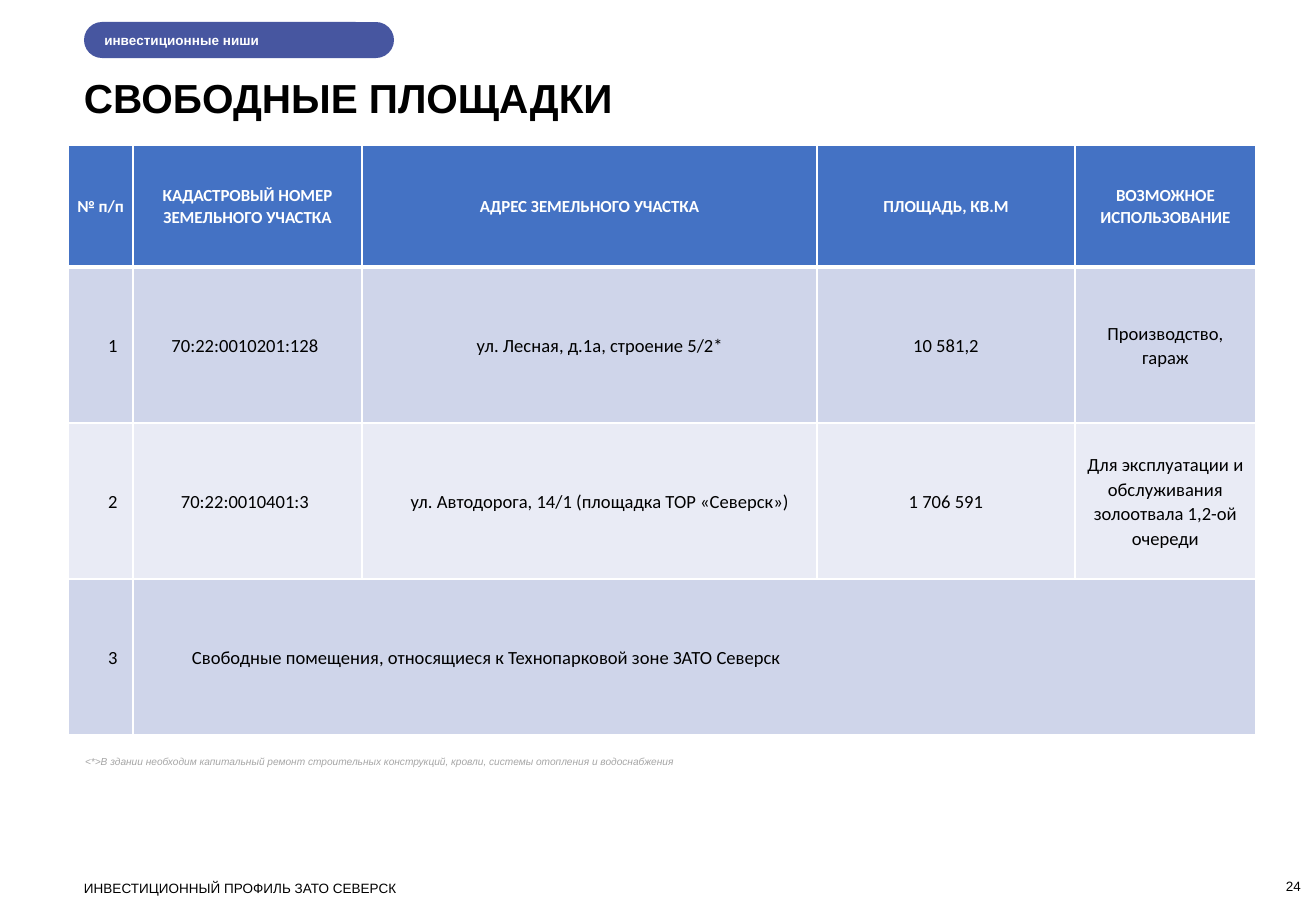
from copy import deepcopy
from dataclasses import dataclass

from lxml.etree import SubElement
from pptx import Presentation
from pptx.dml.color import RGBColor
from pptx.enum.shapes import MSO_SHAPE
from pptx.enum.text import MSO_ANCHOR, PP_ALIGN
from pptx.oxml.ns import qn
from pptx.util import Emu, Pt

EMU_PER_PX = 7526


@dataclass(frozen=True)
class Theme:
    heading_font: str = "Arial"
    table_font: str = "Calibri"
    black: str = "000000"
    white: str = "FFFFFF"
    note_gray: str = "A6A6A6"
    badge_blue: str = "4756A0"
    header_blue: str = "4472C4"
    bands: tuple = ("CFD5EA", "E9EBF5")
    title_size: int = 24
    header_size: int = 10
    body_size: int = 11
    small_size: int = 8
    note_size: int = 6


THEME = Theme()


def px(length):
    return Emu(length * EMU_PER_PX)


def write_text(frame, text, size=THEME.small_size, font=THEME.heading_font,
               color=THEME.black, bold=False, italic=False, align=PP_ALIGN.LEFT,
               line_spacing=None, space_after=None):
    """Fill the first paragraph; a vertical tab in the text is a line break."""
    paragraph = frame.paragraphs[0]
    paragraph.text = text
    paragraph.alignment = align
    paragraph.line_spacing = line_spacing
    paragraph.space_after = space_after
    for run in paragraph.runs:
        run.font.size = Pt(size)
        run.font.name = font
        run.font.bold = bold
        run.font.italic = italic
        run.font.color.rgb = RGBColor.from_string(color)
    for line_break in paragraph._p.findall(qn("a:br")):
        line_break.append(deepcopy(paragraph.runs[0]._r.rPr))


def set_margins(target, left=0, top=0, right=0, bottom=0):
    target.margin_left, target.margin_top = px(left), px(top)
    target.margin_right, target.margin_bottom = px(right), px(bottom)


class SlideBuilder:
    def __init__(self, slide, theme):
        self.slide = slide
        self.theme = theme

    def text(self, left, top, width, height, text, anchor=MSO_ANCHOR.TOP, **style):
        shape = self.slide.shapes.add_textbox(px(left), px(top), px(width), px(height))
        frame = shape.text_frame
        frame.word_wrap = True
        frame.vertical_anchor = anchor
        set_margins(frame)
        write_text(frame, text, **style)

    def badge(self, left, top, width, height, text):
        shape = self.slide.shapes.add_shape(
            MSO_SHAPE.ROUNDED_RECTANGLE, px(left), px(top), px(width), px(height))
        shape.adjustments[0] = 0.5
        shape.shadow.inherit = False
        shape.fill.solid()
        shape.fill.fore_color.rgb = RGBColor.from_string(self.theme.badge_blue)
        shape.line.fill.background()
        frame = shape.text_frame
        frame.vertical_anchor = MSO_ANCHOR.MIDDLE
        set_margins(frame, left=15)
        write_text(frame, text, color=self.theme.white, bold=True)

    def table(self, left, top, column_widths, row_heights):
        table = self.slide.shapes.add_table(
            len(row_heights), len(column_widths), px(left), px(top),
            px(sum(column_widths)), px(sum(row_heights))).table
        for column, width in zip(table.columns, column_widths):
            column.width = px(width)
        for row, height in zip(table.rows, row_heights):
            row.height = px(height)
        return table

    def cell(self, cell, fill, margins, top_border=1, bottom_border=1):
        cell.vertical_anchor = MSO_ANCHOR.MIDDLE
        set_margins(cell, *margins)
        properties = cell._tc.get_or_add_tcPr()
        for side, points in (("L", 1), ("R", 1), ("T", top_border), ("B", bottom_border)):
            line = SubElement(properties, qn(f"a:ln{side}"), w=str(Pt(points)))
            line_fill = SubElement(line, qn("a:solidFill"))
            SubElement(line_fill, qn("a:srgbClr"), val=self.theme.white)
        cell.fill.solid()
        cell.fill.fore_color.rgb = RGBColor.from_string(fill)

    def cell_text(self, cell, text, **style):
        write_text(cell.text_frame, text, font=self.theme.table_font,
                   line_spacing=1.07, space_after=Pt(8), **style)


HEADERS = ("№ п/п", "КАДАСТРОВЫЙ НОМЕР ЗЕМЕЛЬНОГО УЧАСТКА", "АДРЕС ЗЕМЕЛЬНОГО УЧАСТКА",
           "ПЛОЩАДЬ, КВ.М", "ВОЗМОЖНОЕ ИСПОЛЬЗОВАНИЕ")
SITES = (
    ("1", "70:22:0010201:128", "ул. Лесная, д.1а, строение 5/2*", "10 581,2",
     "Производство,\vгараж"),
    ("2", "70:22:0010401:3", "ул. Автодорога, 14/1 (площадка ТОР «Северск»)", "1 706 591",
     "Для эксплуатации и обслуживания золоотвала 1,2-ой очереди"),
    ("3", "Свободные помещения, относящиеся к Технопарковой зоне ЗАТО Северск", "", "", ""),
)
HEADER_MARGINS = (1, 27, 1, 27)
BODY_MARGINS = ((40, 1, 1, 0), (0, 1, 5, 0), (22, 1, 1, 0), (1, 1, 1, 0), (1, 1, 1, 0))
MERGED_MARGINS = (59, 1, 5, 0)


def add_sites_table(builder):
    theme = builder.theme
    table = builder.table(68, 145, (65, 229, 455, 258, 181), (122, 156, 156, 156))

    # Header row
    for column, header in enumerate(HEADERS):
        cell = table.cell(0, column)
        builder.cell(cell, theme.header_blue, HEADER_MARGINS, bottom_border=3)
        builder.cell_text(cell, header, size=theme.header_size, color=theme.white,
                          bold=True, align=PP_ALIGN.CENTER)

    # Banded site rows
    for row, site in enumerate(SITES, start=1):
        merged = not site[2]
        for column, text in enumerate(site):
            cell = table.cell(row, column)
            margins = MERGED_MARGINS if merged and column else BODY_MARGINS[column]
            builder.cell(cell, theme.bands[(row - 1) % 2], margins,
                         top_border=3 if row == 1 else 1)
            if text:
                centered = column > 0 and not merged
                builder.cell_text(cell, text, size=theme.body_size,
                                  align=PP_ALIGN.CENTER if centered else PP_ALIGN.LEFT)
        if merged:
            table.cell(row, 1).merge(table.cell(row, len(site) - 1))


def main():
    presentation = Presentation()
    presentation.slide_width, presentation.slide_height = px(1316), px(911)
    slide = presentation.slides.add_slide(presentation.slide_layouts[6])
    builder = SlideBuilder(slide, THEME)

    # Heading
    builder.text(84, 73, 1217, 49, "СВОБОДНЫЕ ПЛОЩАДКИ", size=THEME.title_size, bold=True)
    builder.badge(84, 22, 310, 36, "инвестиционные ниши")

    # Table and its footnote
    add_sites_table(builder)
    builder.text(85, 755, 1103, 13,
                 "<*>В здании необходим капитальный ремонт строительных конструкций, "
                 "кровли, системы отопления и водоснабжения",
                 size=THEME.note_size, color=THEME.note_gray, italic=True)

    # Footer
    builder.text(84, 880, 358, 16, "ИНВЕСТИЦИОННЫЙ ПРОФИЛЬ ЗАТО СЕВЕРСК")
    builder.text(1204, 878, 97, 16, "24", anchor=MSO_ANCHOR.BOTTOM, align=PP_ALIGN.RIGHT)

    presentation.save("out.pptx")


if __name__ == "__main__":
    main()
